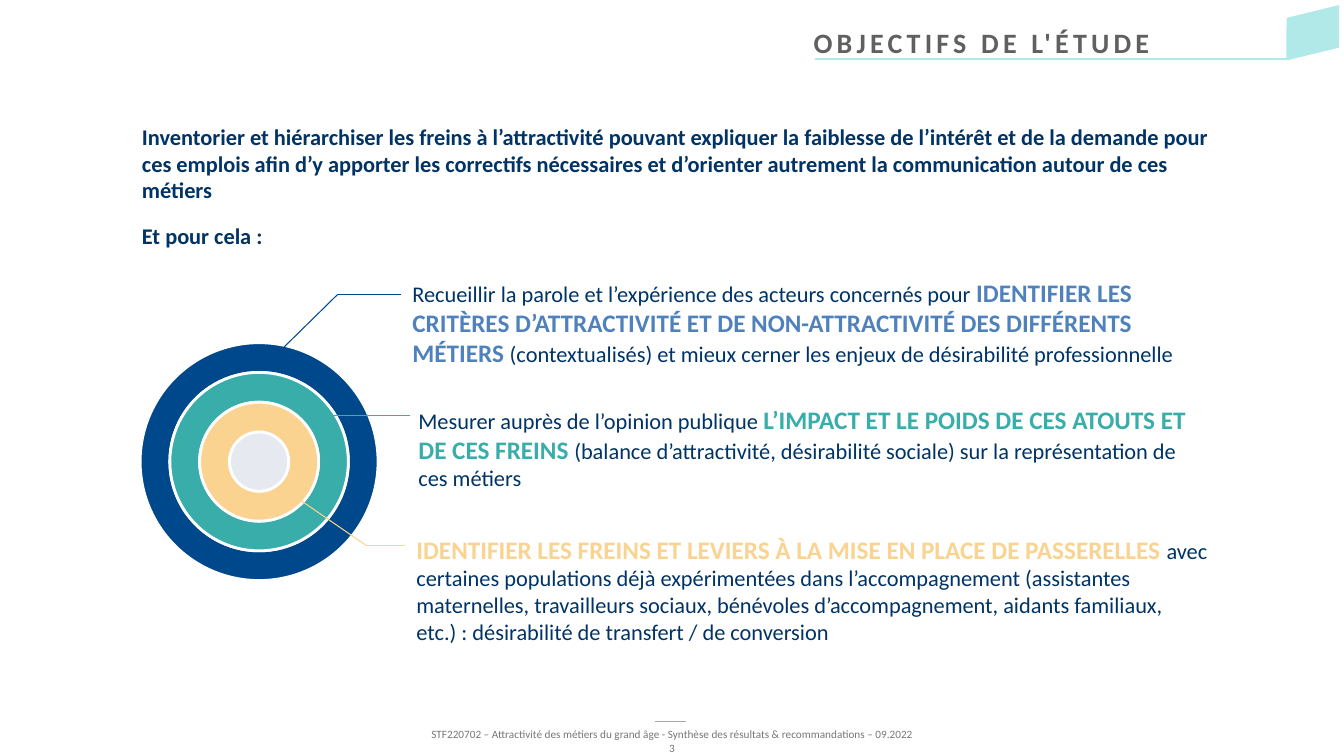
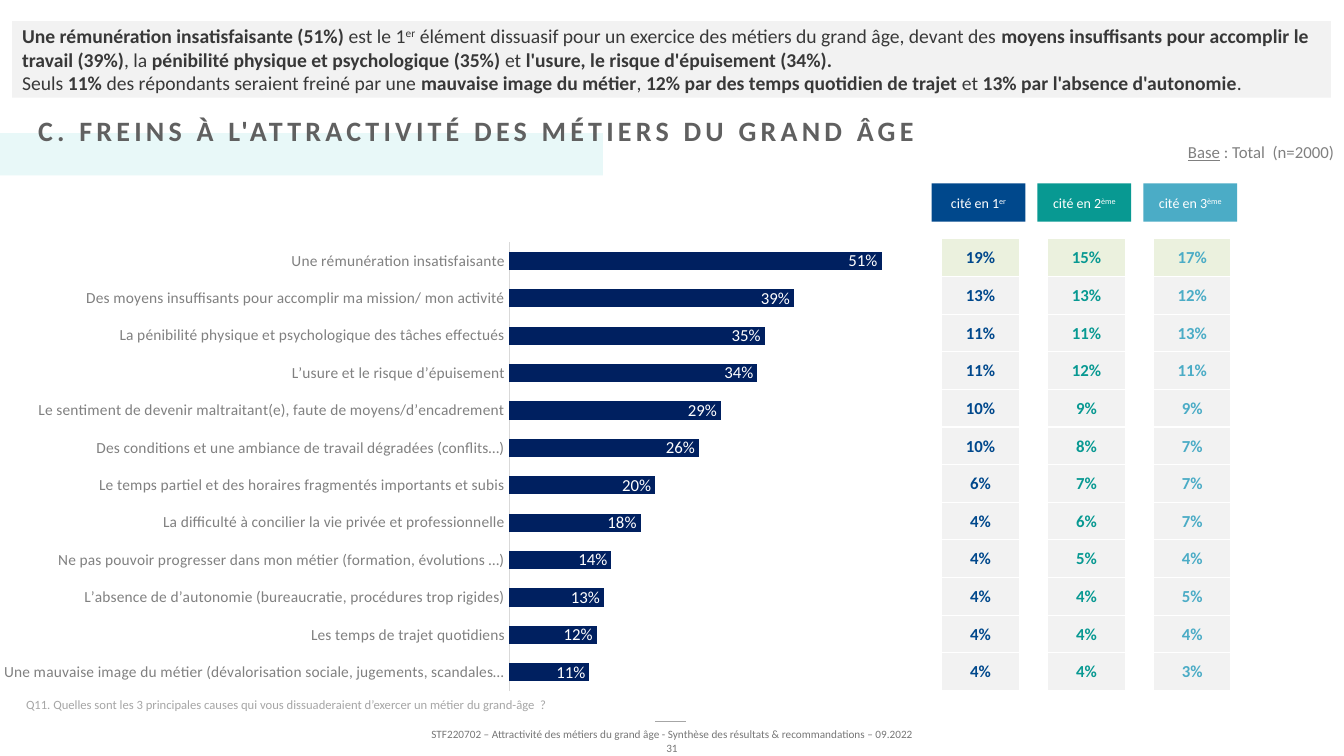
from itertools import pairwise

from lxml import etree
from pptx import Presentation
from pptx.chart.data import CategoryChartData
from pptx.dml.color import RGBColor
from pptx.enum.chart import XL_CHART_TYPE, XL_LABEL_POSITION, XL_TICK_LABEL_POSITION, XL_TICK_MARK
from pptx.enum.shapes import MSO_CONNECTOR, MSO_SHAPE
from pptx.enum.text import MSO_ANCHOR, PP_ALIGN
from pptx.oxml.ns import qn
from pptx.util import Inches, Pt

LEFT, CENTER, RIGHT = PP_ALIGN.LEFT, PP_ALIGN.CENTER, PP_ALIGN.RIGHT
TOP, MIDDLE, BOTTOM = MSO_ANCHOR.TOP, MSO_ANCHOR.MIDDLE, MSO_ANCHOR.BOTTOM
RECTANGLE, DONUT, OVAL = MSO_SHAPE.RECTANGLE, MSO_SHAPE.DONUT, MSO_SHAPE.OVAL
PARALLELOGRAM = MSO_SHAPE.PARALLELOGRAM
STRAIGHT = MSO_CONNECTOR.STRAIGHT
BAR_CLUSTERED = XL_CHART_TYPE.BAR_CLUSTERED
INSIDE_END = XL_LABEL_POSITION.INSIDE_END
NO_TICK = XL_TICK_MARK.NONE
NEXT_TO_AXIS = XL_TICK_LABEL_POSITION.NEXT_TO_AXIS

FONT = "Calibri"
WHITE, NAVY, DEEP_BLUE = "FFFFFF", "003366", "00488C"
TEAL, SAND, AQUA = "38ADA9", "FAD390", "B1E9E9"
TITLE_GRAY, FOOTER_GRAY, MID_GRAY = "606060", "777777", "808080"
RULE_GRAY, PALE_GRAY = "A6A6A6", "F2F2F2"
FOOTER = "STF220702 – Attractivité des métiers du grand âge - Synthèse des résultats & recommandations – 09.2022"
BOLD = {"bold": True}
SUPER = {"superscript": True}

AIMS = [
    ((3.79, 2.7, 8.16, 1.01), [
        ("Recueillir la parole et l’expérience des acteurs concernés pour ", {}),
        ("IDENTIFIER LES CRITÈRES D’ATTRACTIVITÉ ET DE NON-ATTRACTIVITÉ DES DIFFÉRENTS MÉTIERS ",
         {"size": 18, "color": "4F81BD", "bold": True}),
        ("(contextualisés) et mieux cerner les enjeux de désirabilité professionnelle", {})]),
    ((3.85, 3.96, 8.03, 1.01), [
        ("Mesurer auprès de l’opinion publique ", {}),
        ("L’IMPACT ET LE POIDS DE CES ATOUTS ET DE CES FREINS ",
         {"size": 18, "color": TEAL, "bold": True}),
        ("(balance d’attractivité, désirabilité sociale) sur la représentation de ces métiers", {})]),
    ((3.83, 5.25, 8.32, 1.21), [
        ("IDENTIFIER LES FREINS ET LEVIERS À LA MISE EN PLACE DE PASSERELLES ",
         {"size": 18, "color": SAND, "bold": True}),
        ("avec certaines populations déjà expérimentées dans l’accompagnement (assistantes "
         "maternelles, travailleurs sociaux, bénévoles d’accompagnement, aidants familiaux, etc.) : "
         "désirabilité de transfert / de conversion", {})]),
]
LEADERS = [
    (DEEP_BLUE, [(3.98, 2.92), (3.35, 2.92), (2.8, 3.46)]),
    (TEAL, [(4.07, 4.12), (3.2, 4.12)]),
    (SAND, [(4.02, 5.41), (3.63, 5.41), (2.86, 4.88)]),
]
KEY_FINDINGS = [
    [("Une rémunération insatisfaisante (51%) ", BOLD), ("est le 1", {}), ("er", SUPER),
     (" élément dissuasif pour un exercice des métiers du grand âge, devant des ", {}),
     ("moyens insuffisants pour accomplir le travail (39%)", BOLD), (", la ", {}),
     ("pénibilité physique et psychologique (35%) ", BOLD), ("et ", {}),
     ("l'usure, le risque d'épuisement (34%).", BOLD)],
    [("Seuls ", {}), ("11%", BOLD), (" des répondants seraient freiné par une ", {}),
     ("mauvaise image du métier", BOLD), (", ", {}),
     ("12% par des temps quotidien de trajet ", BOLD), ("et ", {}),
     ("13% par l'absence d'autonomie", BOLD), (".", {})],
]
BARRIERS = [
    ("Une rémunération insatisfaisante", 0.51),
    ("Des moyens insuffisants pour accomplir ma mission/ mon activité", 0.39),
    ("La pénibilité physique et psychologique des tâches effectués", 0.35),
    ("L’usure et le risque d’épuisement", 0.34),
    ("Le sentiment de devenir maltraitant(e), faute de moyens/d’encadrement", 0.29),
    ("Des conditions et une ambiance de travail dégradées (conflits…)", 0.26),
    ("Le temps partiel et des horaires fragmentés importants et subis", 0.2),
    ("La difficulté à concilier la vie privée et professionnelle", 0.18),
    ("Ne pas pouvoir progresser dans mon métier (formation, évolutions …)", 0.14),
    ("L’absence de d’autonomie (bureaucratie, procédures trop rigides)", 0.13),
    ("Les temps de trajet quotidiens", 0.12),
    ("Une mauvaise image du métier (dévalorisation sociale, jugements, scandales…", 0.11),
]
RANKS = [
    ("cité en 1", "er", DEEP_BLUE, [19, 13, 11, 11, 10, 10, 6, 4, 4, 4, 4, 4]),
    ("cité en 2", "ème", "089992", [15, 13, 11, 12, 9, 8, 7, 6, 5, 4, 4, 4]),
    ("cité en 3", "ème", "4BACC6", [17, 12, 13, 11, 9, 7, 7, 7, 4, 5, 4, 3]),
]


def rgb(color):
    """Turn a hex string into a colour."""
    return RGBColor.from_string(color)


def inches(values):
    """Turn numbers into lengths."""
    return [Inches(value) for value in values]


def write(paragraph, text, size=16, color=NAVY, bold=False, underline=False,
          superscript=False, spacing=0):
    """Append one formatted run to a paragraph."""
    run = paragraph.add_run()
    run.text = text
    font = run.font
    font.name, font.size, font.bold = FONT, Pt(size), bold
    font.color.rgb = rgb(color)
    if underline:
        font.underline = True
    properties = run._r.get_or_add_rPr()
    if superscript:
        properties.set("baseline", "30000")
    if spacing:
        properties.set("spc", str(spacing * 100))


def fill_frame(frame, paragraphs, align=LEFT, anchor=TOP, margins=(0.1, 0.05, 0.1, 0.05),
               gap=0, wrap=True, **style):
    """Fill a text frame with paragraphs made of (text, overrides) runs."""
    frame.word_wrap = wrap
    frame.vertical_anchor = anchor
    (frame.margin_left, frame.margin_top,
     frame.margin_right, frame.margin_bottom) = inches(margins)
    for index, runs in enumerate(paragraphs):
        paragraph = frame.add_paragraph() if index else frame.paragraphs[0]
        paragraph.alignment = align
        if index:
            paragraph.space_before = Pt(gap)
        for text, overrides in runs:
            write(paragraph, text, **{**style, **overrides})


def add_text(slide, box, paragraphs, **style):
    """Add a text box."""
    fill_frame(slide.shapes.add_textbox(*inches(box)).text_frame, paragraphs, **style)


def add_block(slide, kind, box, fill, outline=None):
    """Add a flat preset shape."""
    block = slide.shapes.add_shape(kind, *inches(box))
    block.shadow.inherit = False
    block.fill.solid()
    block.fill.fore_color.rgb = rgb(fill)
    if outline:
        block.line.color.rgb = rgb(outline)
        block.line.width = Pt(2)
    else:
        block.line.fill.background()
    return block


def add_lines(slide, points, color, width=0.75):
    """Join successive points with straight lines."""
    for start, end in pairwise(points):
        line = slide.shapes.add_connector(STRAIGHT, *inches(start + end))
        line.line.color.rgb = rgb(color)
        line.line.width = Pt(width)
        etree.SubElement(line._element.spPr, qn("a:effectLst"))


def add_title(slide, box, title):
    """Add the spaced grey title."""
    add_text(slide, box, [[(title, {})]], size=20, color=TITLE_GRAY, bold=True, spacing=3)


def add_footer(slide, number):
    """Add the rule, the study reference and the page number."""
    style = {"align": CENTER, "size": 8, "color": FOOTER_GRAY}
    add_text(slide, (6.47, 7.31, 0.39, 0.24), [[(str(number), {})]], wrap=False, **style)
    add_lines(slide, [(6.5, 7.16), (6.8, 7.16)], RULE_GRAY, 1)
    add_text(slide, (1.91, 7.17, 9.52, 0.24), [[(FOOTER, {})]], **style)


def add_target(slide, center_x, center_y, core, ring):
    """Draw concentric rings around a core disc."""
    def square(size):
        return center_x - size / 2, center_y - size / 2, size, size

    add_block(slide, OVAL, square(core), "E7E9F1", WHITE)
    for step, color in ((3, DEEP_BLUE), (2, TEAL), (1, SAND)):
        size = core + 2 * step * ring
        donut = add_block(slide, DONUT, square(size), color, WHITE)
        donut.adjustments[0] = ring / size


def place_plot(chart, x, y, w, h):
    """Fix the inner plot area as fractions of the chart."""
    area = chart._chartSpace.chart.plotArea
    for old in area.findall(qn("c:layout")):
        area.remove(old)
    layout = etree.Element(qn("c:layout"))
    manual = etree.SubElement(layout, qn("c:manualLayout"))
    settings = [("layoutTarget", "inner"), ("xMode", "edge"), ("yMode", "edge"),
                ("x", x), ("y", y), ("w", w), ("h", h)]
    for tag, value in settings:
        etree.SubElement(manual, qn(f"c:{tag}")).set("val", str(value))
    area.insert(0, layout)


def style_font(font, size, color):
    """Set the font of a chart part."""
    font.name, font.size = FONT, Pt(size)
    font.color.rgb = rgb(color)


def add_barrier_chart(slide, box):
    """Add the bar chart of barriers."""
    data = CategoryChartData(number_format="0%")
    data.categories = [name for name, _ in BARRIERS]
    data.add_series("Series 1", [share for _, share in BARRIERS])
    chart = slide.shapes.add_chart(BAR_CLUSTERED, *inches(box), data).chart
    chart.has_legend = chart.has_title = False
    style_font(chart.font, 10, "000000")
    place_plot(chart, 0.542, 0.032, 0.429, 0.936)

    names = chart.category_axis
    names.reverse_order = True
    names.major_tick_mark = names.minor_tick_mark = NO_TICK
    names.tick_label_position = NEXT_TO_AXIS
    names.format.line.color.rgb = rgb("D9D9D9")
    names.format.line.width = Pt(0.75)
    style_font(names.tick_labels.font, 11, MID_GRAY)

    shares = chart.value_axis
    shares.minimum_scale, shares.maximum_scale = 0, 0.6
    shares.has_major_gridlines = False
    shares.visible = False

    plot = chart.plots[0]
    plot.gap_width = 106
    plot.vary_by_categories = False
    bars = plot.series[0]
    bars.invert_if_negative = False
    bars.format.fill.solid()
    bars.format.fill.fore_color.rgb = rgb("002060")
    labels = bars.data_labels
    labels.show_value = True
    labels.position = INSIDE_END
    labels.number_format, labels.number_format_is_linked = "0%", False
    style_font(labels.font, 12, WHITE)


def border_cell(cell, color):
    """Draw thin borders on the four sides of a cell."""
    properties = cell._tc.get_or_add_tcPr()
    for index, side in enumerate("LRTB"):
        edge = etree.Element(qn(f"a:ln{side}"), w=str(Pt(1)))
        solid = etree.SubElement(edge, qn("a:solidFill"))
        etree.SubElement(solid, qn("a:srgbClr"), val=color)
        properties.insert(index, edge)


def add_rank_table(slide, box, percents, color):
    """Add a one-column table with its first row highlighted."""
    table = slide.shapes.add_table(len(percents), 1, *inches(box)).table
    table.first_row = table.horz_banding = False
    for row, percent in enumerate(percents):
        cell = table.cell(row, 0)
        cell.fill.solid()
        cell.fill.fore_color.rgb = rgb(PALE_GRAY if row else "EBF1DE")
        border_cell(cell, WHITE)
        cell.vertical_anchor = MIDDLE
        cell.margin_left = cell.margin_right = cell.margin_top = Inches(0.01)
        cell.margin_bottom = 0
        paragraph = cell.text_frame.paragraphs[0]
        paragraph.alignment = CENTER
        write(paragraph, f"{percent}%", size=12, color=color, bold=True)


def build_aims(slide):
    """Build the slide of study aims."""
    add_footer(slide, 3)
    add_target(slide, 2.57, 4.58, 0.59, 0.295)
    for box, runs in AIMS:
        add_text(slide, box, [runs], margins=(0.3, 0.05, 0.1, 0.05))
    for color, points in LEADERS:
        add_lines(slide, points, color)
    add_title(slide, (7.97, 0.2, 4.72, 0.44), "OBJECTIFS DE L'ÉTUDE")
    add_lines(slide, [(8.08, 0.59), (12.76, 0.59)], AQUA, 1.5)
    add_block(slide, PARALLELOGRAM, (12.7, 0.12, 0.64, 0.41), AQUA).rotation = 166.3
    add_text(slide, (1.31, 1.17, 11.06, 1.33), [
        [("Inventorier et hiérarchiser les freins à l’attractivité pouvant expliquer la faiblesse de "
          "l’intérêt et de la demande pour ces emplois afin d’y apporter les correctifs nécessaires "
          "et d’orienter autrement la communication autour de ces métiers", {})],
        [("Et pour cela :", {})]], gap=13, bold=True)


def build_barriers(slide):
    """Build the slide of barriers to attractiveness."""
    add_footer(slide, 31)
    add_barrier_chart(slide, (-0.44, 2.25, 10.13, 4.76))
    add_block(slide, RECTANGLE, (0, 1.32, 5.98, 0.42), "E8F8F8")
    add_title(slide, (0.28, 1.08, 9.58, 0.44), "C. FREINS À L'ATTRACTIVITÉ DES MÉTIERS DU GRAND ÂGE")
    summary = add_block(slide, RECTANGLE, (0.12, 0.21, 13.08, 0.76), PALE_GRAY)
    fill_frame(summary.text_frame, KEY_FINDINGS, anchor=MIDDLE, margins=(0.1, 0, 0.1, 0),
               size=14, color="383838")
    add_text(slide, (0.16, 6.86, 13.04, 0.25), [[
        ("Q11. Quelles sont les 3 principales causes qui vous dissuaderaient d’exercer un métier "
         "du grand-âge  ?", {})]], anchor=BOTTOM, size=9, color=RULE_GRAY)
    for index, (label, suffix, color, percents) in enumerate(RANKS):
        left = 9.24 + 1.05 * index
        header = add_block(slide, RECTANGLE, (left, 1.82, 0.93, 0.38), color)
        fill_frame(header.text_frame, [[(label, {}), (suffix, SUPER)]], align=CENTER,
                   anchor=MIDDLE, margins=(0, 0, 0, 0), size=10, color=WHITE)
        add_rank_table(slide, (left + 0.1, 2.37, 0.77, 4.48), percents, color)
    add_text(slide, (10.13, 1.36, 3.2, 0.3), [[
        ("Base", {"underline": True}), (" : Total  (n=2000)", {})]],
        align=RIGHT, size=12, color=MID_GRAY)


def main():
    """Build and save the presentation."""
    deck = Presentation()
    deck.slide_width, deck.slide_height = Inches(13.33), Inches(7.5)
    for build in (build_aims, build_barriers):
        build(deck.slides.add_slide(deck.slide_layouts[6]))
    deck.save("out.pptx")


if __name__ == "__main__":
    main()
